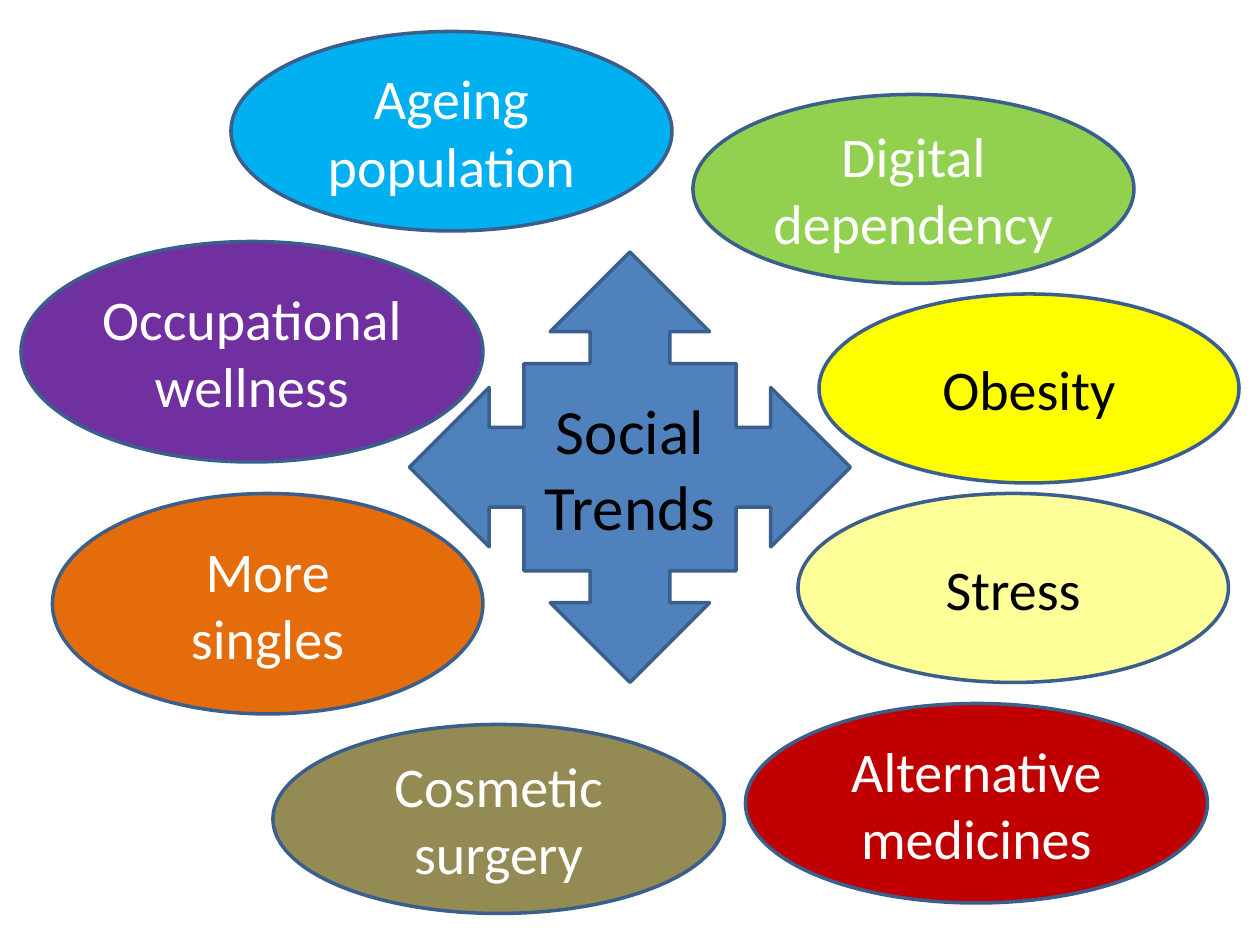
from pptx import Presentation
from pptx.dml.color import RGBColor
from pptx.enum.shapes import MSO_SHAPE
from pptx.enum.text import MSO_ANCHOR, PP_ALIGN
from pptx.util import Pt

# Content: text, fill, text colour, (left, top, width, height) in points
HUB = ("Social\nTrends", "4F81BD", "000000", (234, 144, 252, 246))
TRENDS = [
    ("Ageing population", "00B0F0", "FFFFFF", (132, 18, 252, 114)),
    ("Alternative\nmedicines", "C00000", "FFFFFF", (426, 402, 264, 114)),
    ("Digital dependency", "92D050", "FFFFFF", (396, 54, 252, 108)),
    ("More singles", "E46C0A", "FFFFFF", (30, 282, 246, 126)),
    ("Cosmetic surgery", "948A54", "FFFFFF", (156, 414, 258, 108)),
    ("Obesity", "FFFF00", "000000", (468, 168, 240, 108)),
    ("Occupational wellness", "7030A0", "FFFFFF", (12, 138, 264, 126)),
    ("Stress", "FFFF99", "000000", (456, 282, 246, 108)),
]
OUTLINE = "3A5F8C"


def set_color(color_format, value):
    color_format.rgb = RGBColor.from_string(value)


def add_labelled(s, kind, size, text, fill, text_color, box):
    sp = s.shapes.add_shape(kind, *map(Pt, box))
    sp.shadow.inherit = False
    sp.fill.solid()
    set_color(sp.fill.fore_color, fill)
    set_color(sp.line.color, OUTLINE)
    sp.line.width = Pt(2)
    tf = sp.text_frame
    tf.word_wrap = True
    tf.vertical_anchor = MSO_ANCHOR.MIDDLE
    tf.text = text
    for p in tf.paragraphs:
        p.alignment = PP_ALIGN.CENTER
        p.font.name = "Calibri"
        p.font.size = Pt(size)
        set_color(p.font.color, text_color)


def main():
    prs = Presentation()
    prs.slide_width, prs.slide_height = Pt(720), Pt(540)
    s = prs.slides.add_slide(prs.slide_layouts[6])

    # Central four-way arrow, then the trends around it
    add_labelled(s, MSO_SHAPE.QUAD_ARROW_CALLOUT, 36, *HUB)
    for trend in TRENDS:
        add_labelled(s, MSO_SHAPE.OVAL, 32, *trend)

    prs.save("out.pptx")


if __name__ == "__main__":
    main()
